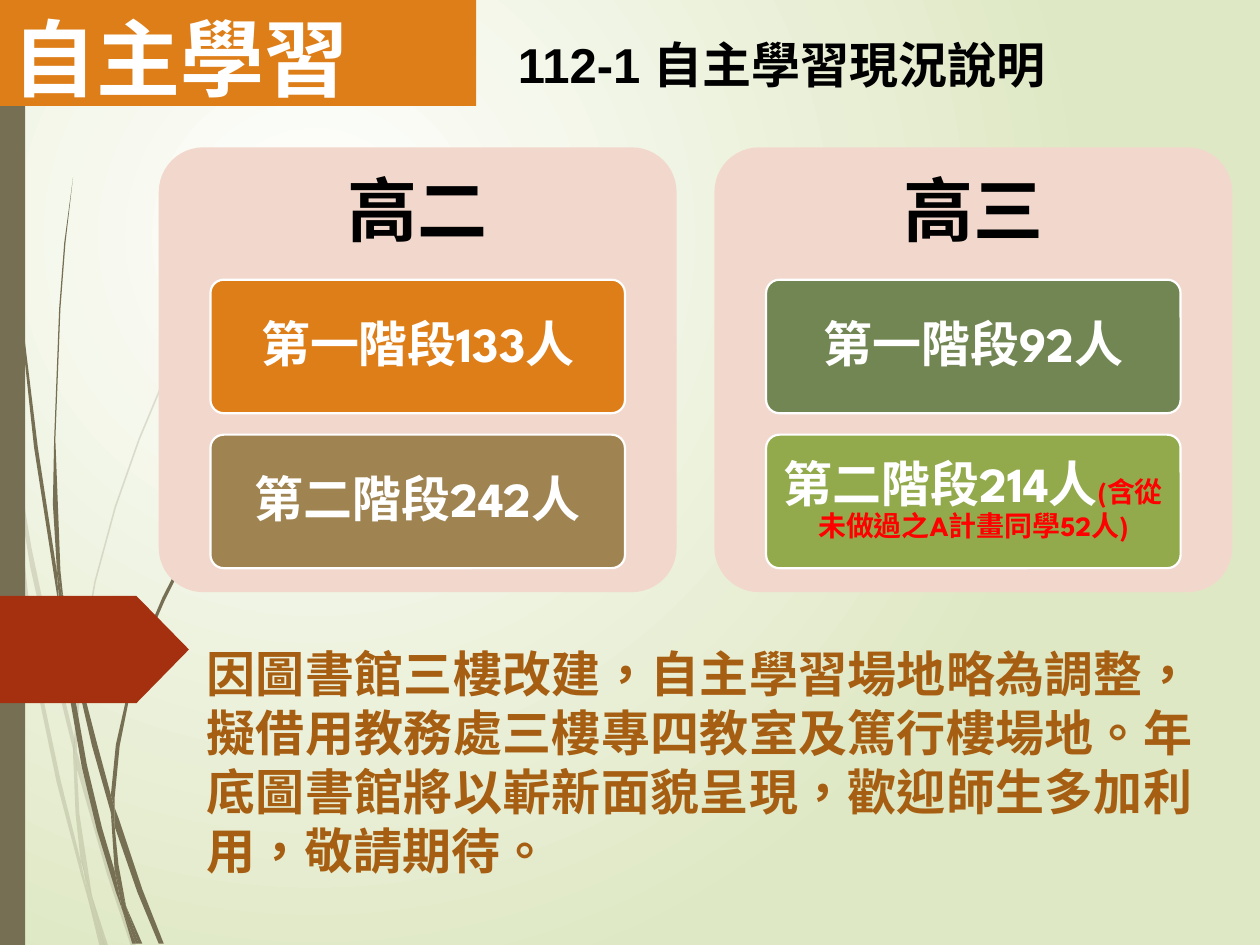
"""Build the slide on the state of self-directed learning in term 112-1."""
from lxml.etree import SubElement
from pptx import Presentation
from pptx.dml.color import RGBColor
from pptx.enum.lang import MSO_LANGUAGE_ID
from pptx.enum.shapes import MSO_SHAPE
from pptx.enum.text import MSO_ANCHOR, MSO_AUTO_SIZE, PP_ALIGN
from pptx.oxml.ns import qn
from pptx.util import Inches, Pt

WHITE = RGBColor(0xFF, 0xFF, 0xFF)
BLACK = RGBColor(0x00, 0x00, 0x00)
RED = RGBColor(0xFF, 0x00, 0x00)
PALE_GREEN = RGBColor(0xDF, 0xE8, 0xC4)
STEM = RGBColor(0x76, 0x6F, 0x54)
BRICK = RGBColor(0xA5, 0x30, 0x10)
ORANGE = RGBColor(0xDE, 0x7E, 0x18)
ROSE = RGBColor(0xF2, 0xD8, 0xCC)
TAN = RGBColor(0x9F, 0x83, 0x51)
MOSS = RGBColor(0x72, 0x86, 0x53)
LEAF = RGBColor(0x92, 0xAA, 0x4C)
RUST = RGBColor(0xA6, 0x5E, 0x12)

COLUMNS, ROWS = 100, 75
DISPLAY, PLAIN = "League Spartan", "Arial"
MARGIN = (0.1, 0.05)

FAINT_BLADES = [
    [(0.8, 35), (0.6, 32.2), (0, 28.2), (0, 29.9), (0.7, 34.4)],
    [(4, 52.2), (5.9, 59.9), (5.9, 58.6), (4.3, 52), (2.5, 43.5), (1, 34.5),
     (1.2, 37.6), (2.4, 45)],
    [(6.4, 60.7), (6.1, 59.6), (6.1, 61), (8.5, 69.4), (10.4, 75.1), (10.8, 75.1),
     (8.8, 69.2)],
    [(8.3, 75.1), (8.6, 75.1), (7.3, 71.1)],
    [(6.4, 68.3), (4.8, 61.9), (3.3, 54.8), (2.2, 46.9), (1.2, 37.6), (0.8, 35),
     (1.9, 47), (3, 54.9), (4.5, 62.1), (6.4, 69.3), (7, 71.4), (6.9, 70.7)],
    [(5.8, 59.9), (6, 64.6), (6.4, 68.3), (7.3, 71.1), (6.3, 64.6), (6.1, 60.8)],
    [(6.1, 58.4), (6.6, 52), (7.6, 46.2), (9.2, 40.3), (11.1, 34.9), (13.4, 29.4),
     (15.9, 24.5), (18.7, 19.8), (21.7, 15.4), (21.7, 15.3), (18.6, 19.7), (15.8, 24.4),
     (13.3, 29.3), (11, 34.8), (9.1, 40.2), (7.5, 46.1), (6.4, 52), (5.9, 58.4),
     (5.9, 58.6), (6.1, 59.6)],
    [(7, 71.4), (7.9, 75.1), (8.2, 75.1)],
    [(6.1, 60.8), (6.1, 59.6), (5.9, 58.6), (5.8, 59.9)],
    [(6.7, 69.2), (6.5, 68.3), (6.9, 70.7), (7, 71.4), (8.2, 75.1), (8.3, 75.1),
     (7.3, 71.1)],
]
DARK_BLADES = [
    [(0.5, 11), (1.4, 23.3), (2.7, 35.5), (4.6, 47.7), (4.7, 48.1), (4.5, 45.3),
     (3, 35.5), (1.5, 23.2), (0.6, 10.9), (0.4, 4.8), (0.3, 0), (0.2, 0), (0.3, 4.8)],
    [(7.3, 59.2), (8.8, 64.5), (8.8, 63.1), (7.7, 59), (6.2, 53.2), (5, 47.2),
     (5.3, 50.5)],
    [(9.4, 64.9), (9.1, 64.1), (9.1, 65.6), (10.9, 70.8), (12.6, 74.9), (13, 74.9),
     (11.3, 70.6)],
    [(9.1, 69.1), (8.1, 65.7), (6.9, 60.7), (6, 55.6), (5.3, 50.5), (4.7, 47.7),
     (5.6, 55.7), (6.5, 60.9), (7.7, 65.9), (9.2, 70.8), (9.7, 72.2), (9.6, 71.7)],
    [(5, 47.2), (4.8, 45.3), (4.4, 34.9), (4.8, 24.5), (5.2, 19.3), (5.8, 14.1),
     (5.1, 19.3), (4.7, 24.5), (4.3, 34.9), (4.2, 40), (4.5, 44.9), (4.9, 47.2)],
    [(11, 74.9), (11.3, 74.9), (10, 71.9)],
    [(4.7, 47.7), (5.3, 50.5), (5, 47.2), (4.9, 47.2), (4.5, 44.9), (4.5, 45.3)],
    [(9.1, 63.3), (9.5, 59.2), (10.3, 55.2), (11.5, 51.3), (13.1, 47.6), (14.9, 44),
     (16.9, 40.6), (19.1, 37.4), (21.6, 34.4), (21.5, 34.4), (19.1, 37.3), (16.8, 40.5),
     (14.7, 43.9), (12.9, 47.4), (11.3, 51.2), (10.1, 55.1), (9.2, 59.1), (8.8, 63.1),
     (9.1, 64.1)],
    [(9.7, 72.2), (10.5, 74.9), (10.8, 74.9)],
    [(8.8, 64.5), (9.1, 69.1), (10, 71.9), (9.4, 68.6), (9.1, 65.6)],
    [(8.8, 64.5), (9.1, 65.6), (9.1, 64.1), (8.8, 63.1)],
    [(9.6, 70.6), (9.1, 69.1), (9.6, 71.7), (9.7, 72.2), (10.8, 74.9), (11, 74.9),
     (10, 71.9)],
]
GRADES = [
    ("高二", [(ORANGE, "第一階段133人", ""), (TAN, "第二階段242人", "")]),
    ("高三", [(MOSS, "第一階段92人", ""),
            (LEAF, "第二階段214人", "(含從未做過之A計畫同學52人)")]),
]


def write(frame, text, size=28, color=WHITE, font=DISPLAY, align=PP_ALIGN.LEFT,
          anchor=MSO_ANCHOR.TOP, margin=MARGIN, wrap=True, spacing=1.0, note=""):
    """Fill a text frame with one bold paragraph and an optional small red note."""
    frame.word_wrap = wrap
    frame.auto_size = MSO_AUTO_SIZE.NONE
    frame.vertical_anchor = anchor
    frame.margin_left = frame.margin_right = Inches(margin[0])
    frame.margin_top = frame.margin_bottom = Inches(margin[1])
    paragraph = frame.paragraphs[0]
    properties = paragraph._p.get_or_add_pPr()
    properties.set("marL", "0")
    properties.set("indent", "0")
    SubElement(properties, qn("a:buNone"))
    paragraph.alignment = align
    paragraph.line_spacing = spacing
    paragraph.space_before = Pt(0)
    for words, points, ink in [(text, size, color), (note, 16, RED)]:
        if words:
            run = paragraph.add_run()
            run.text = words
            run.font.name, run.font.size, run.font.bold = font, Pt(points), True
            run.font.language_id = MSO_LANGUAGE_ID.TRADITIONAL_CHINESE
            run.font.color.rgb = ink


class Canvas:
    """Hold the style and the current slide, measured in grid cells."""

    def __init__(self, deck):
        """Add a title and content slide to the deck."""
        self.column = deck.slide_width / COLUMNS
        self.row = deck.slide_height / ROWS
        self.slide = deck.slides.add_slide(deck.slide_layouts[1])

    def box(self, left, top, width, height):
        """Turn grid cells into slide lengths."""
        return [round(cells * unit) for cells, unit in zip(
            (left, top, width, height), (self.column, self.row) * 2)]

    def background(self, center, edge):
        """Paint a radial gradient on the slide."""
        fill = self.slide.background.fill
        fill.gradient()
        for stop, color in zip(fill.gradient_stops, (center, edge)):
            stop.color.rgb = color
        gradient = self.slide.element.find(".//" + qn("a:gradFill"))
        gradient.remove(gradient.find(qn("a:lin")))
        radial = SubElement(gradient, qn("a:path"), {"path": "circle"})
        SubElement(radial, qn("a:fillToRect"),
                   {"l": "50000", "t": "50000", "r": "100000", "b": "100000"})

    def paint(self, shape, fill, line=None):
        """Give a shape a flat fill and an optional outline."""
        shape.shadow.inherit = False
        shape.fill.solid()
        shape.fill.fore_color.rgb = fill
        if line is None:
            shape.line.fill.background()
        else:
            shape.line.color.rgb, shape.line.width = line, Pt(1.25)

    def block(self, kind, area, fill, line=None, adjust=None):
        """Add a preset shape and return its text frame."""
        shape = self.slide.shapes.add_shape(kind, *self.box(*area))
        if adjust is not None:
            shape.adjustments[0] = adjust
        self.paint(shape, fill, line)
        return shape.text_frame

    def label(self, area, text, **style):
        """Add a text box."""
        write(self.slide.shapes.add_textbox(*self.box(*area)).text_frame, text, **style)

    def holder(self, index, area, text, **style):
        """Move a template placeholder and fill it."""
        holder = self.slide.placeholders[index]
        holder.left, holder.top, holder.width, holder.height = self.box(*area)
        write(holder.text_frame, text, **style)

    def blade(self, points, opacity=100):
        """Draw one piece of a grass stem."""
        outline = [(x * self.column, y * self.row) for x, y in points]
        builder = self.slide.shapes.build_freeform(*outline[0])
        builder.add_line_segments(outline[1:], close=True)
        grass = builder.convert_to_shape()
        self.paint(grass, STEM)
        if opacity < 100:
            color = grass._element.spPr.find(".//" + qn("a:srgbClr"))
            SubElement(color, qn("a:alpha"), {"val": str(opacity * 1000)})

    def grade(self, left, name, stages):
        """Add a card with a heading and one box per stage."""
        self.block(MSO_SHAPE.ROUNDED_RECTANGLE, (left, 11.7, 41.1, 35.3), ROSE, adjust=0.1)
        centred = {"align": PP_ALIGN.CENTER, "anchor": MSO_ANCHOR.MIDDLE, "spacing": 0.9}
        self.label((left, 11.7, 41.1, 10.6), name, size=40, color=BLACK,
                   margin=(0.17, 0.17), **centred)
        for order, (fill, count, note) in enumerate(stages):
            stage = self.block(MSO_SHAPE.ROUNDED_RECTANGLE,
                               (left + 4.1, 22.2 + 12.3 * order, 32.9, 10.6),
                               fill, WHITE, 0.1)
            write(stage, count, note=note, margin=(0.08, 0.06), **centred)


def main():
    """Build and save the slide."""
    deck = Presentation()
    deck.slide_width, deck.slide_height = Inches(10), Inches(7.5)
    canvas = Canvas(deck)
    canvas.background(WHITE, PALE_GREEN)
    for points in FAINT_BLADES:
        canvas.blade(points, opacity=20)
    for points in DARK_BLADES:
        canvas.blade(points)
    canvas.block(MSO_SHAPE.RECTANGLE, (0, 0, 2, ROWS), STEM)
    canvas.block(MSO_SHAPE.PENTAGON, (0, 47.3, 15, 8.5), BRICK, adjust=0.49)
    topic = canvas.block(MSO_SHAPE.RECTANGLE, (0, 0, 37.8, 8.4), ORANGE)
    write(topic, "自主學習", size=48)
    canvas.holder(0, (40.1, 2.2, 45.6, 5.7), "112-1 自主學習現況說明",
                  color=BLACK, font=PLAIN, wrap=False)
    for order, (name, stages) in enumerate(GRADES):
        canvas.grade(12.6 + 44.1 * order, name, stages)
    canvas.holder(1, (15.4, 50.6, 80.3, 19.9),
                  "因圖書館三樓改建，自主學習場地略為調整，擬借用教務處三樓專四教室及篤行樓場地。"
                  "年底圖書館將以嶄新面貌呈現，歡迎師生多加利用，敬請期待。",
                  color=RUST, font=PLAIN, align=PP_ALIGN.JUSTIFY)
    deck.save("out.pptx")


if __name__ == "__main__":
    main()
